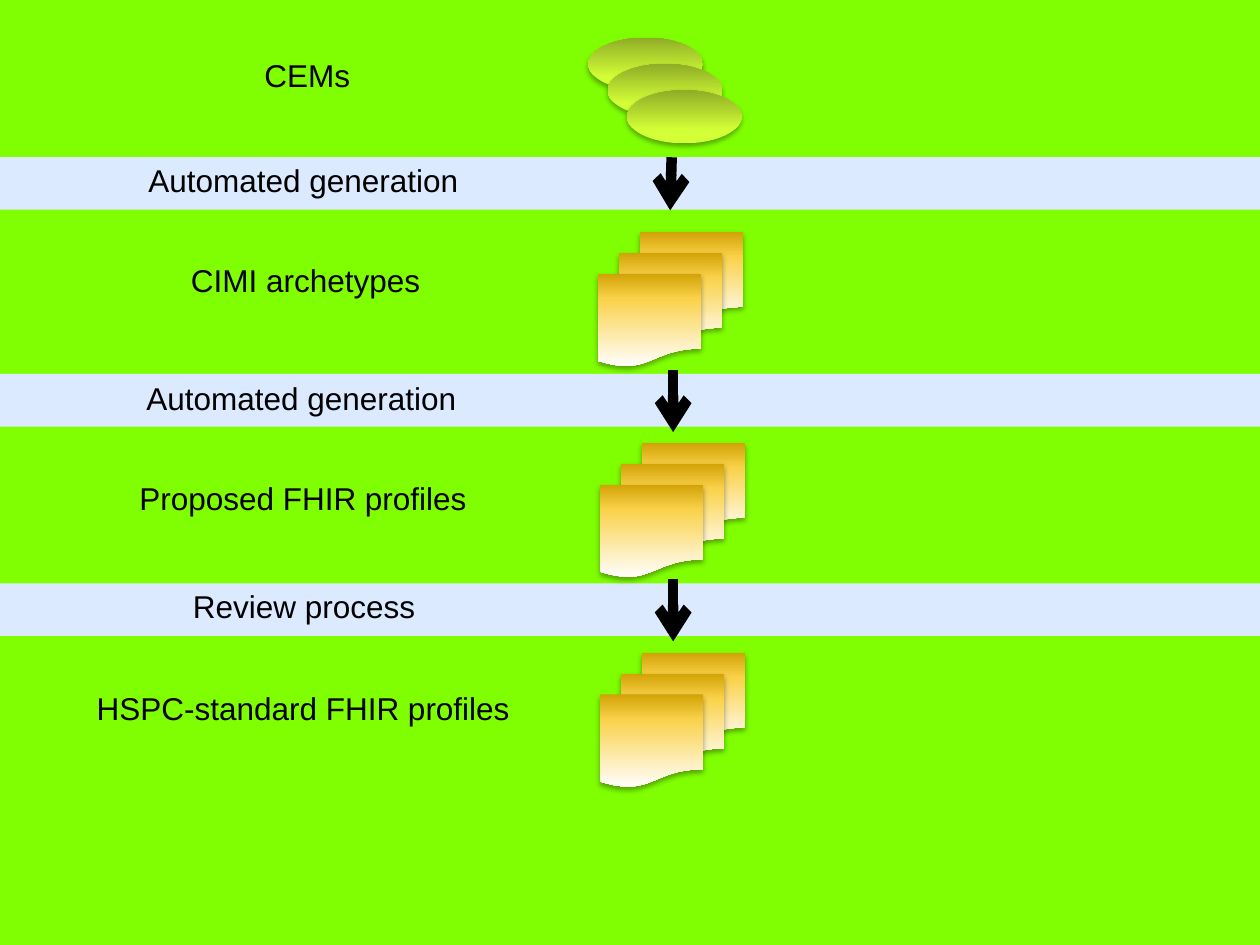
from dataclasses import dataclass

from lxml.etree import SubElement
from pptx import Presentation
from pptx.dml.color import RGBColor
from pptx.enum.shapes import MSO_CONNECTOR as Connector, MSO_SHAPE as Shape
from pptx.enum.text import MSO_AUTO_SIZE as AutoSize
from pptx.oxml.ns import qn
from pptx.util import Cm, Pt


@dataclass(frozen=True)
class Theme:
    background: str = "80FF03"
    band: str = "DBEAFF"
    ink: str = "000000"
    font: str = "Arial"
    text_size: int = 18
    arrow_width: int = 6
    document_stops: tuple = ((0, "D2A306"), (27, "FAD24A"), (100, "FFFFFF"))
    model_stops: tuple = ((25, "D3FF36"), (100, "8FAD26"))


THEME = Theme()
PAGE_WIDTH, PAGE_HEIGHT = 25.4, 19.05
BAND_HEIGHT = 1.06
LABEL_HEIGHT = 1.02

BAND_TOPS = (3.17, 7.54, 11.76)
DOCUMENT_STACKS = ((12.9, 4.68), (12.94, 8.93), (12.94, 13.16))
ARROWS = (
    (13.54, 3.17, 13.51, 4.24),
    (13.57, 7.45, 13.57, 8.71),
    (13.57, 11.67, 13.57, 12.93),
)
# text, left, top, width
LABELS = (
    ("CEMs", 5.08, 1.0, 2.26),
    ("Automated generation", 2.74, 3.13, 6.99),
    ("CIMI archetypes", 3.6, 5.13, 5.18),
    ("Automated generation", 2.7, 7.51, 6.83),
    ("Proposed FHIR profiles", 2.56, 9.53, 7.19),
    ("Review process", 3.64, 11.71, 5.03),
    ("HSPC-standard FHIR profiles", 1.7, 13.76, 8.92),
)


def add_color(parent, value):
    return SubElement(parent, qn("a:srgbClr"), val=value)


def set_gradient(shape, stops, angle):
    """Fill with (percent, colour) stops, running clockwise at angle degrees."""
    shape.fill.gradient()
    gradient = shape._element.spPr.find(qn("a:gradFill"))
    stop_list = gradient.find(qn("a:gsLst"))
    for old_stop in list(stop_list):
        stop_list.remove(old_stop)
    for percent, color in stops:
        add_color(SubElement(stop_list, qn("a:gs"), pos=str(percent * 1000)), color)
    gradient.find(qn("a:lin")).set("ang", str(angle * 60000))


def add_shadow(shape):
    shape.shadow.inherit = False
    effects = shape._element.spPr.find(qn("a:effectLst"))
    shadow = SubElement(
        effects, qn("a:outerShdw"), blurRad=str(Pt(3.1)), dist=str(Pt(1.8)),
        dir="5400000", rotWithShape="0",
    )
    SubElement(add_color(shadow, THEME.ink), qn("a:alpha"), val="35000")


def add_band(page, top):
    band = page.shapes.add_shape(
        Shape.RECTANGLE, 0, Cm(top), Cm(PAGE_WIDTH), Cm(BAND_HEIGHT)
    )
    band.shadow.inherit = False
    band.fill.solid()
    band.fill.fore_color.rgb = RGBColor.from_string(THEME.band)
    band.line.fill.background()


def add_stack(page, kind, origin, step, size, stops, angle):
    """Three overlapping shapes, from the back one at origin to the front."""
    for index in range(3):
        left, top = (start + index * move for start, move in zip(origin, step))
        shape = page.shapes.add_shape(kind, Cm(left), Cm(top), *map(Cm, size))
        shape.line.fill.background()
        set_gradient(shape, stops, angle)
        add_shadow(shape)


def add_arrow(page, ends):
    arrow = page.shapes.add_connector(Connector.STRAIGHT, *map(Cm, ends))
    arrow.line.color.rgb = RGBColor.from_string(THEME.ink)
    arrow.line.width = Pt(THEME.arrow_width)
    SubElement(arrow.line._get_or_add_ln(), qn("a:tailEnd"), type="arrow")
    SubElement(arrow._element.spPr, qn("a:effectLst"))


def add_label(page, text, left, top, width):
    box = page.shapes.add_textbox(Cm(left), Cm(top), Cm(width), Cm(LABEL_HEIGHT))
    frame = box.text_frame
    frame.word_wrap = False
    frame.auto_size = AutoSize.SHAPE_TO_FIT_TEXT
    span = frame.paragraphs[0].add_run()
    span.text = text
    span.font.name = THEME.font
    span.font.size = Pt(THEME.text_size)
    span.font.color.rgb = RGBColor.from_string(THEME.ink)


def main():
    deck = Presentation()
    deck.slide_width, deck.slide_height = Cm(PAGE_WIDTH), Cm(PAGE_HEIGHT)
    page = deck.slides.add_slide(deck.slide_layouts[6])
    page.background.fill.solid()
    page.background.fill.fore_color.rgb = RGBColor.from_string(THEME.background)

    for top in BAND_TOPS:
        add_band(page, top)
    add_stack(page, Shape.OVAL, (11.86, 0.76), (0.39, 0.53), (2.31, 1.07),
              THEME.model_stops, 270)
    for origin in DOCUMENT_STACKS:
        add_stack(page, Shape.FLOWCHART_DOCUMENT, origin, (-0.42, 0.42),
                  (2.08, 1.88), THEME.document_stops, 90)
    for ends in ARROWS:
        add_arrow(page, ends)
    for label in LABELS:
        add_label(page, *label)

    deck.save("out.pptx")


if __name__ == "__main__":
    main()
